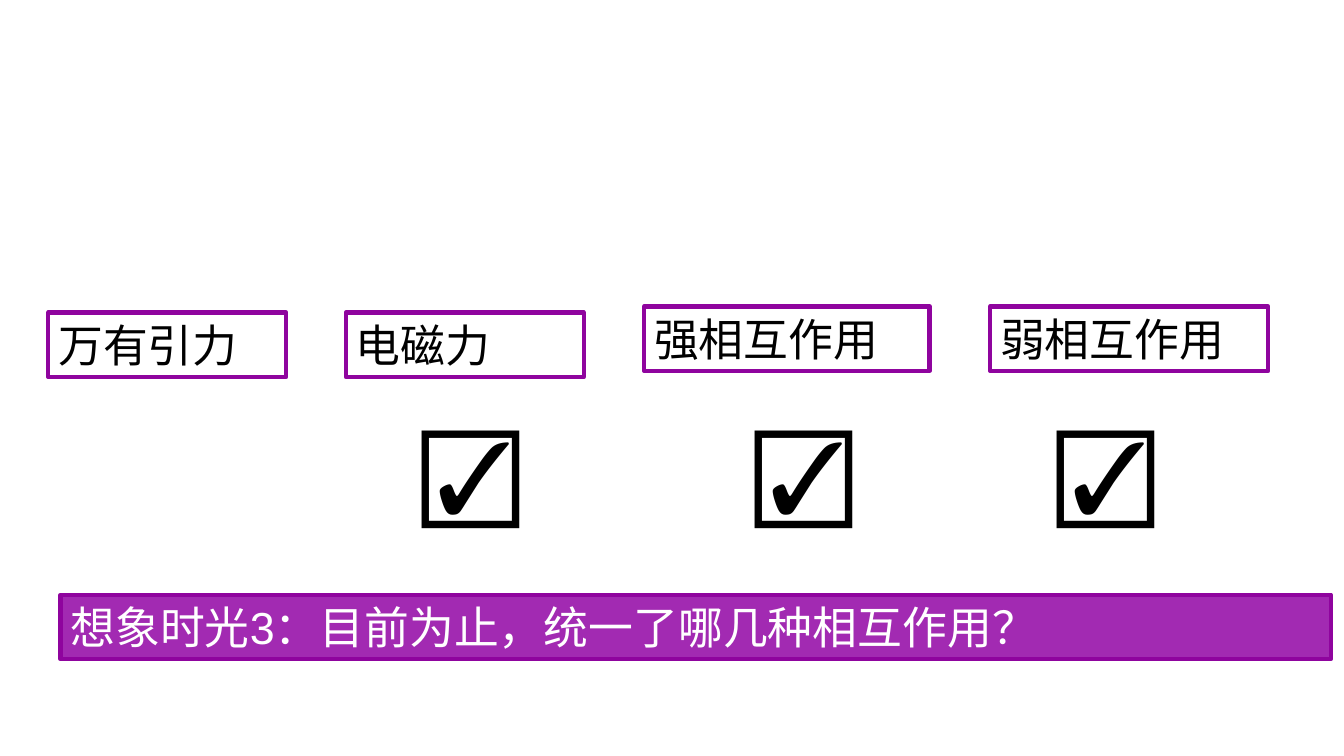
from dataclasses import dataclass

from pptx import Presentation
from pptx.dml.color import RGBColor
from pptx.enum.shapes import MSO_SHAPE as Shape
from pptx.enum.text import MSO_ANCHOR as Anchor, MSO_AUTO_SIZE as AutoSize, PP_ALIGN as Align
from pptx.util import Inches, Pt


@dataclass(frozen=True)
class Theme:
    border: RGBColor = RGBColor(0x8F, 0x04, 0x9E)
    banner: RGBColor = RGBColor(0xA2, 0x2A, 0xB2)
    white: RGBColor = RGBColor(0xFF, 0xFF, 0xFF)
    black: RGBColor = RGBColor(0x00, 0x00, 0x00)
    body_font: str = "Arial"
    tick_font: str = "Cabin"
    body_size: Pt = Pt(32)
    tick_size: Pt = Pt(72)
    border_width: Pt = Pt(3)


THEME = Theme()
BAR_HEIGHT = 0.64
FORCES = [
    ("万有引力", 0.48, 3.1, 2.36),
    ("电磁力", 3.43, 3.1, 2.36),
    ("强相互作用", 6.39, 3.04, 2.83),
    ("弱相互作用", 9.82, 3.04, 2.76),
]
TICK_LEFTS = [4.07, 7.38, 10.37]


def write(box, text, font, size, color):
    frame = box.text_frame
    frame.auto_size = AutoSize.SHAPE_TO_FIT_TEXT
    frame.vertical_anchor = Anchor.TOP
    para = frame.paragraphs[0]
    para.text = text
    para.alignment = Align.LEFT
    para.font.name = font
    para.font.size = size
    para.font.color.rgb = color


def add_bar(page, text, left, top, width, fill, color):
    box = page.shapes.add_shape(
        Shape.RECTANGLE, Inches(left), Inches(top), Inches(width), Inches(BAR_HEIGHT)
    )
    box.shadow.inherit = False
    box.fill.solid()
    box.fill.fore_color.rgb = fill
    box.line.color.rgb = THEME.border
    box.line.width = THEME.border_width
    box.text_frame.word_wrap = True
    write(box, text, THEME.body_font, THEME.body_size, color)


def add_tick(page, left, top):
    box = page.shapes.add_textbox(Inches(left), Inches(top), Inches(1.07), Inches(1.31))
    box.text_frame.word_wrap = False
    write(box, "☑", THEME.tick_font, THEME.tick_size, THEME.black)


def add_forces(page):
    for text, left, top, width in FORCES:
        add_bar(page, text, left, top, width, THEME.white, THEME.black)


def add_ticks(page, top):
    for left in TICK_LEFTS:
        add_tick(page, left, top)


def main():
    deck = Presentation()
    deck.slide_width = Inches(13.33)
    deck.slide_height = Inches(7.5)
    page = deck.slides.add_slide(deck.slide_layouts[6])
    add_forces(page)
    add_ticks(page, 4)
    add_bar(
        page,
        "想象时光3：目前为止，统一了哪几种相互作用？",
        0.6, 5.9, 12.6, THEME.banner, THEME.white,
    )
    deck.save("out.pptx")


if __name__ == "__main__":
    main()
